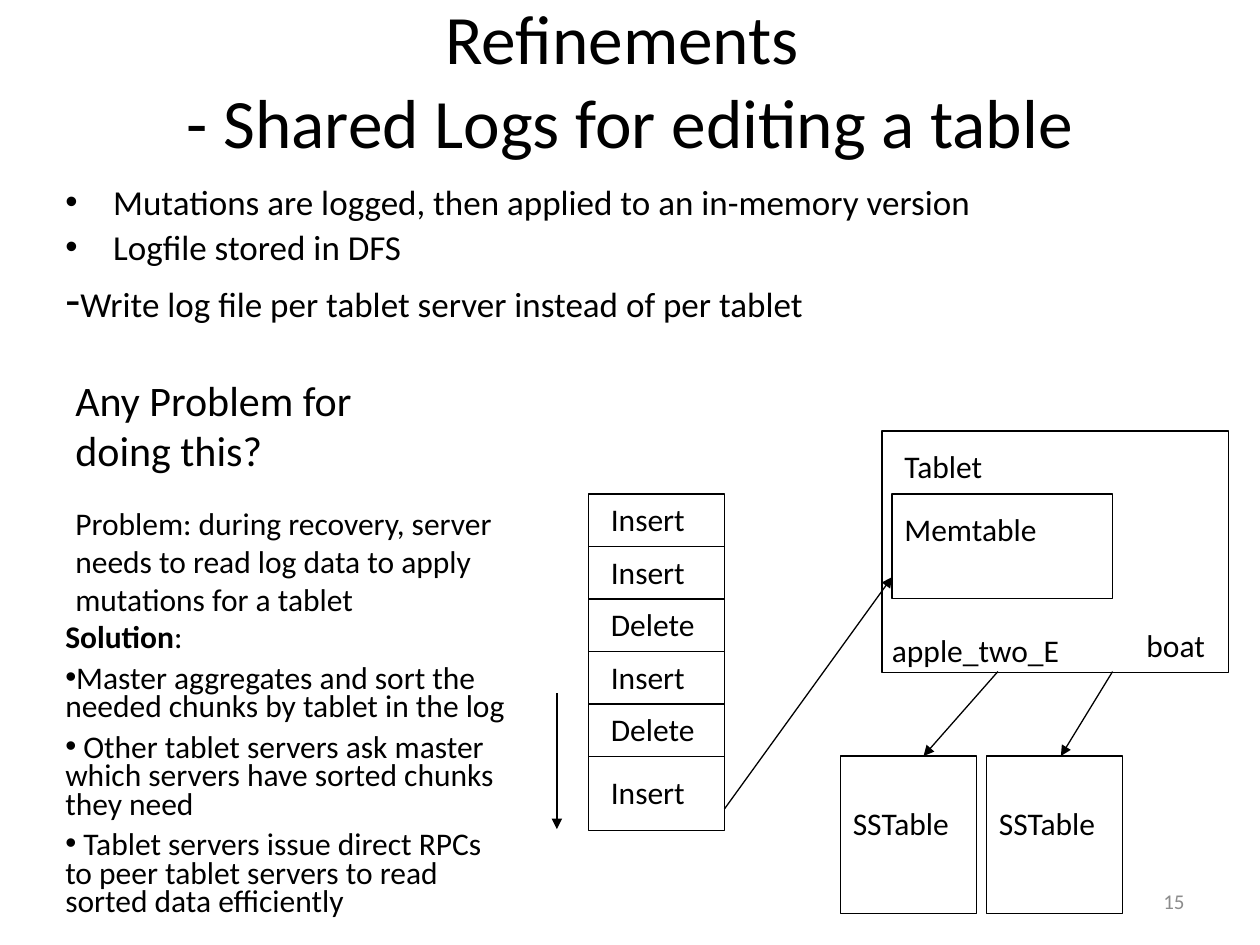
import pptx
import pptx.util
import pptx.dml.color
import pptx.enum.shapes
import pptx.enum.text
import pptx.oxml.ns
from lxml import etree

Inches, Pt = pptx.util.Inches, pptx.util.Pt
ALIGN = pptx.enum.text.PP_ALIGN
ANCHOR = pptx.enum.text.MSO_ANCHOR
FONT, BLACK, GREY = "Calibri", "000000", "8C8C8C"

# Content: a paragraph is a list of (text, size, bold) runs
TITLE = ["Refinements ", "- Shared Logs for editing a table"]
POINTS = [
    ("•", [("Mutations are logged, then applied to an in-memory version", 20, False)]),
    ("•", [("Logfile stored in DFS", 20, False)]),
    (None, [("-", 28, False),
            ("Write log file per tablet server instead of per tablet", 20, False)]),
]
QUESTION = "Any Problem for doing this?"
PROBLEM = ("Problem: during recovery, server needs to read log data "
           "to apply mutations for a tablet")
SOLUTION = [
    (None, [("Solution", 18, True), (":", 18, False)]),
    ("•", [("Master aggregates and sort the needed chunks by tablet in the log", 18, False)]),
    ("•", [(" Other tablet servers ask master which servers have sorted chunks they need",
            18, False)]),
    ("•", [(" Tablet servers issue direct RPCs to peer tablet servers to read sorted data "
            "efficiently", 18, False)]),
]
LOG = ["Insert", "Insert", "Delete", "Insert", "Delete", "Insert"]
LABEL_WIDTH = {"Insert": 0.83, "Delete": 0.92}
SSTABLES = [6.67, 7.83]
TABLET_LABELS = [  # text, left, top, width
    ("Tablet", 7.08, 3.5, 0.9),
    ("apple_two_E", 6.98, 4.96, 1.65),
    ("boat", 9, 4.92, 0.69),
]
ARROWS = [  # x1, y1, x2, y2
    (7.92, 5.33, 7.33, 6),
    (8.83, 5.33, 8.42, 6),
    (4.42, 5.5, 4.42, 6.58),
    (5.75, 6.42, 7.08, 4.58),
]

prs = pptx.Presentation()
prs.slide_width, prs.slide_height = Inches(10), Inches(7.5)
s = prs.slides.add_slide(prs.slide_layouts[6])


def color(hex_value):
    return pptx.dml.color.RGBColor.from_string(hex_value)


def add_child(parent, tag, **attrs):
    return etree.SubElement(parent, pptx.oxml.ns.qn(tag), attrs)


def text_frame(x, y, w, h, wrap=True, anchor=ANCHOR.TOP):
    tf = s.shapes.add_textbox(Inches(x), Inches(y), Inches(w), Inches(h)).text_frame
    tf.word_wrap = wrap
    tf.vertical_anchor = anchor
    return tf


def add_run(p, text, size, bold=False, fill=BLACK):
    r = p.add_run()
    r.text = text
    r.font.name, r.font.size, r.font.bold = FONT, Pt(size), bold
    r.font.color.rgb = color(fill)


def line_of_text(text, x, y, w, h=0.4, size=18, wrap=False):
    p = text_frame(x, y, w, h, wrap).paragraphs[0]
    add_run(p, text, size)
    return p


def bullet_list(items, box, line_spacing, space_before, indent=0):
    tf = text_frame(*box)
    for i, (bullet, runs) in enumerate(items):
        p = tf.add_paragraph() if i else tf.paragraphs[0]
        p.line_spacing = line_spacing
        p.space_before = Pt(space_before)
        pPr = p._p.get_or_add_pPr()
        pPr.set("marL", str(Inches(indent)))
        pPr.set("indent", str(-Inches(indent)))
        if bullet:
            add_child(pPr, "a:buFont", typeface="Arial")
            add_child(pPr, "a:buChar", char=bullet)
        else:
            add_child(pPr, "a:buNone")
        for run in runs:
            add_run(p, *run)


def box(x, y, w, h):
    sp = s.shapes.add_shape(pptx.enum.shapes.MSO_SHAPE.RECTANGLE,
                            Inches(x), Inches(y), Inches(w), Inches(h))
    sp.shadow.inherit = False
    sp.fill.background()
    sp.line.color.rgb = color(BLACK)
    sp.line.width = Pt(0.75)


def line(x1, y1, x2, y2, arrow=False):
    cn = s.shapes.add_connector(pptx.enum.shapes.MSO_CONNECTOR.STRAIGHT,
                                Inches(x1), Inches(y1), Inches(x2), Inches(y2))
    cn.line.color.rgb = color(BLACK)
    cn.line.width = Pt(0.75)
    if arrow:
        add_child(cn.line._get_or_add_ln(), "a:tailEnd", type="triangle")
    add_child(cn._element.spPr, "a:effectLst")


# Title
p = text_frame(0.5, 0, 9, 1.25, anchor=ANCHOR.MIDDLE).paragraphs[0]
p.alignment = ALIGN.CENTER
add_run(p, TITLE[0], 39.6)
p.add_line_break()
add_run(p, TITLE[1], 39.6)

# Main points
bullet_list(POINTS, (0.42, 1.42, 8.2, 1.5), 0.9, 4, 0.38)

# SSTables
for x in SSTABLES:
    box(x, 6, 1.08, 1.25)
    line_of_text("SSTable", x, 6.33, 1.16)

# Tablet with its memtable
box(7, 3.42, 2.75, 1.92)
for label in TABLET_LABELS:
    line_of_text(*label)
box(7.08, 3.92, 1.75, 0.83)
line_of_text("Memtable", 7.08, 4, 1.3)

# Shared log: equal rows, the last one taller with its label lowered
LOG_X, LOG_Y, LOG_W, LOG_H, ROW_H = 4.67, 3.92, 1.08, 2.67, 1.25 / 3
box(LOG_X, LOG_Y, LOG_W, LOG_H)
for i, entry in enumerate(LOG):
    y = LOG_Y + i * ROW_H
    if i:
        line(LOG_X, y, LOG_X + LOG_W, y)
    drop = 0.08 if i == len(LOG) - 1 else 0
    line_of_text(entry, LOG_X + 0.08, y + drop, LABEL_WIDTH[entry])

for arrow in ARROWS:
    line(*arrow, arrow=True)

# Problem and solution
line_of_text(QUESTION, 0.5, 2.92, 2.67, 0.91, 24, wrap=True)
p = line_of_text(PROBLEM, 0.5, 3.95, 3.67, 1.01, wrap=True)
p.space_before = Pt(7)
bullet_list(SOLUTION, (0.42, 4.92, 3.74, 2.84), 0.75, 7)

# Slide number
p = text_frame(7.17, 6.95, 2.33, 0.4, anchor=ANCHOR.MIDDLE).paragraphs[0]
p.alignment = ALIGN.RIGHT
add_run(p, "15", 12, fill=GREY)

prs.save("out.pptx")
